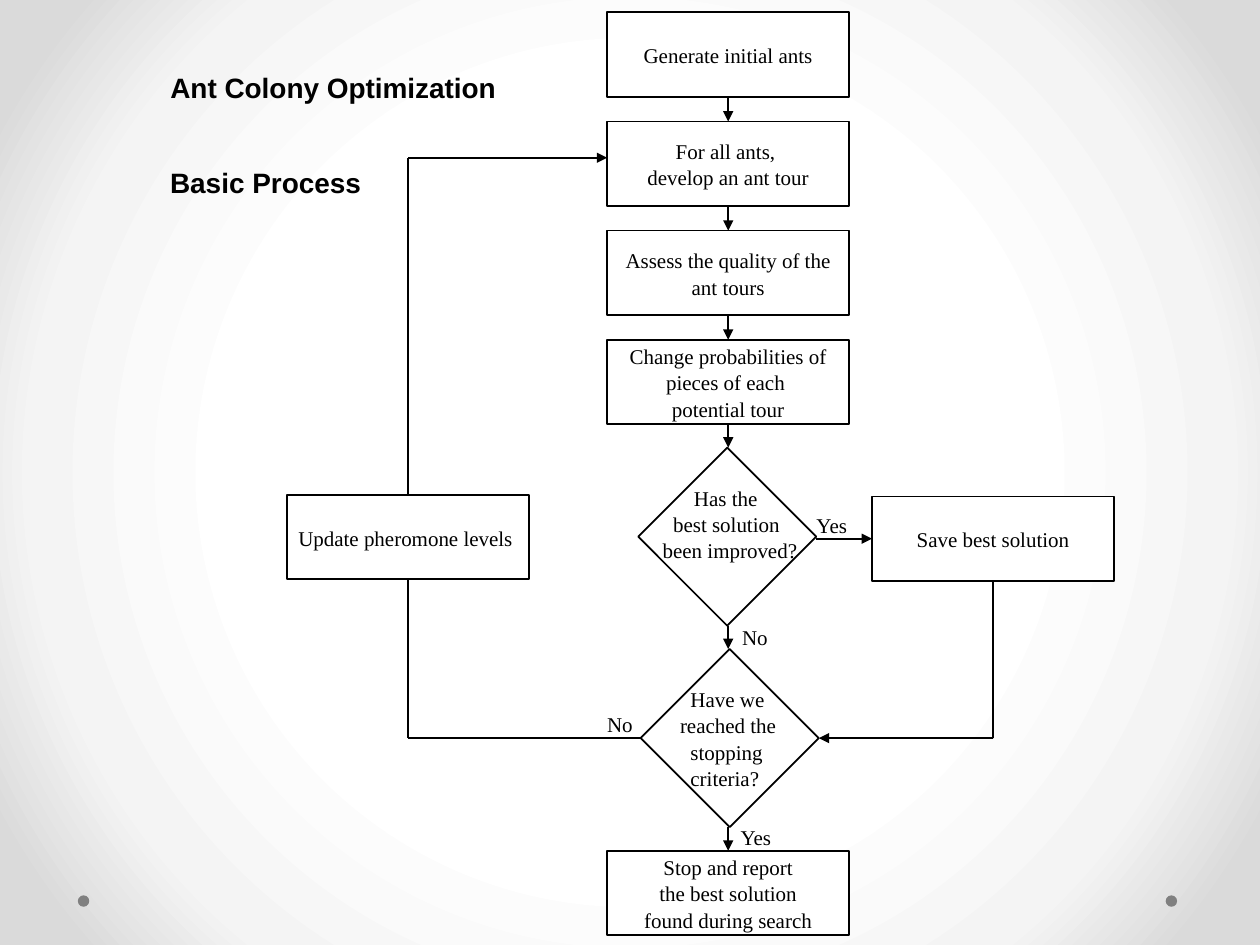
from dataclasses import dataclass
from typing import Optional

from lxml import etree
from pptx import Presentation, oxml, util as u
from pptx.dml import color
from pptx.enum import shapes, text
from pptx.oxml import ns


@dataclass(frozen=True)
class Theme:
    ink: str = "000000"
    paper: str = "FFFFFF"
    dot: str = "808080"
    glow: tuple = ((50, "FFFFFF"), (76, "F4F4F4"), (92, "DADADA"))
    line: float = 1
    head: tuple = ("Arial", 16, True)
    body: tuple = ("Times New Roman", 12, False)


@dataclass(frozen=True)
class Box:
    x: float
    y: float
    lines: tuple


@dataclass(frozen=True)
class Note:
    x: float
    y: float
    w: float
    h: float
    lines: tuple
    dents: tuple = ()


T = Theme()
WIDE, HIGH, SIDE = 4.88, 1.7, 2.54
COL, TOP, STEP = 12.24, 0.25, 2.2
MID = COL + WIDE / 2
HALF = SIDE / 2 ** 0.5  # centre to corner of a tilted square

STEPS = (
    ("Generate initial ants",),
    ("For all ants, ", "develop an ant tour"),
    ("Assess the quality of the", "ant tours"),
    ("Change probabilities of", "pieces of each ", "potential tour"),
)
STOP = Box(COL, 17.15, ("Stop and report", "the best solution", "found during search"))
SAVE = Box(17.58, 10.01, ("Save best solution",))
UPDATE = Box(5.79, 9.98, ("Update pheromone levels ",))
BETTER, DONE = (14.66, 10.82), (14.71, 14.88)  # centres of the decisions
NOTES = (
    Note(13.11, 9.63, 3.23, 1.78,
         ("Has the", "best solution", "been improved?"), (0.63, 0.21, 0)),
    Note(13.46, 13.69, 2.57, 2.29,
         ("Have we", "reached the", "stopping", "criteria?"), (0.21, 0, 0.21, 0.21)),
    Note(11.99, 14.2, 1.02, 0.76, ("No",)),
    Note(14.71, 12.45, 1.02, 0.76, ("No",)),
    Note(16.21, 10.19, 1.17, 0.76, ("Yes",)),
    Note(14.68, 16.48, 1.17, 0.76, ("Yes",)),
)


def rgb(code: str) -> color.RGBColor:
    return color.RGBColor.from_string(code)


def apply(item, **form) -> None:
    for key, val in form.items():
        setattr(item, key, val)


def write(shape, lines: tuple, style: tuple, align, anchor, dents: tuple = ()) -> None:
    frame = shape.text_frame
    frame.text = "\n".join(lines)
    apply(frame, word_wrap=False, auto_size=text.MSO_AUTO_SIZE.NONE, vertical_anchor=anchor)
    face, size, bold = style
    for i, para in enumerate(frame.paragraphs):
        apply(para, alignment=align, line_spacing=1.05)
        if dents:
            para._p.get_or_add_pPr().set("marL", str(u.Cm(dents[i])))
        for run in para.runs:
            apply(run.font, name=face, size=u.Pt(size), bold=bold)
            run.font.color.rgb = rgb(T.ink)


def form(slide, kind, x: float, y: float, w: float, h: float,
         fill: str = T.paper, edge: Optional[str] = T.ink):
    shape = slide.shapes.add_shape(kind, *map(u.Cm, (x, y, w, h)))
    shape.shadow.inherit = False
    shape.fill.solid()
    shape.fill.fore_color.rgb = rgb(fill)
    if edge:
        shape.line.color.rgb = rgb(edge)
        shape.line.width = u.Pt(T.line)
    else:
        shape.line.fill.background()
    return shape


def card(slide, box: Box):
    shape = form(slide, shapes.MSO_SHAPE.RECTANGLE, box.x, box.y, WIDE, HIGH)
    write(shape, box.lines, T.body, text.PP_ALIGN.CENTER, text.MSO_ANCHOR.MIDDLE)
    return shape


def choice(slide, mid: tuple) -> None:
    x, y = (v - SIDE / 2 for v in mid)
    form(slide, shapes.MSO_SHAPE.RECTANGLE, x, y, SIDE, SIDE).rotation = 45


def label(slide, note: Note, style: tuple = T.body) -> None:
    shape = slide.shapes.add_textbox(*map(u.Cm, (note.x, note.y, note.w, note.h)))
    write(shape, note.lines, style, text.PP_ALIGN.LEFT, text.MSO_ANCHOR.TOP, note.dents)


def link(slide, start: tuple, end: tuple, arrow: bool = True,
         tie: Optional[tuple] = None, to: Optional[tuple] = None) -> None:
    """Draw a line; tie and to are (shape, side) joints at its two ends."""
    wire = slide.shapes.add_connector(
        shapes.MSO_CONNECTOR.STRAIGHT, *map(u.Cm, (*start, *end)))
    if tie:
        wire.begin_connect(*tie)
    if to:
        wire.end_connect(*to)
    wire.line.color.rgb = rgb(T.ink)
    wire.line.width = u.Pt(T.line)
    if arrow:
        etree.SubElement(wire.line._get_or_add_ln(), ns.qn("a:tailEnd"), type="triangle")
    etree.SubElement(wire._element.spPr, ns.qn("a:effectLst"))


def backdrop(slide) -> None:
    stops = "".join(f'<a:gs pos="{pos * 1000}"><a:srgbClr val="{code}"/></a:gs>'
                    for pos, code in T.glow)
    bg = oxml.parse_xml(
        f'<p:bg {ns.nsdecls("p", "a")}><p:bgPr><a:gradFill rotWithShape="1">'
        f'<a:gsLst>{stops}</a:gsLst><a:path path="circle">'
        '<a:fillToRect l="50000" t="50000" r="50000" b="50000"/></a:path>'
        '</a:gradFill><a:effectLst/></p:bgPr></p:bg>')
    slide._element.cSld.insert(0, bg)


def main() -> None:
    deck = Presentation()
    apply(deck, slide_width=u.Cm(25.4), slide_height=u.Cm(19.05))
    slide = deck.slides.add_slide(deck.slide_layouts[5])

    # Backdrop and corner dots
    backdrop(slide)
    for x in (1.57, 23.5):
        form(slide, shapes.MSO_SHAPE.OVAL, x, 18.05, 0.23, 0.23, T.dot, None)

    # Headings
    title = slide.shapes.title
    apply(title, left=u.Cm(3.18), top=u.Cm(1.27), width=u.Cm(7.26), height=u.Cm(0.94))
    write(title, ("Ant Colony Optimization",), T.head,
          text.PP_ALIGN.LEFT, text.MSO_ANCHOR.TOP)
    label(slide, Note(3.18, 3.18, 4.37, 0.94, ("Basic Process",)), T.head)

    # Boxes, decisions and labels
    cards = [card(slide, Box(COL, TOP + i * STEP, lines)) for i, lines in enumerate(STEPS)]
    stop, save, update = (card(slide, box) for box in (STOP, SAVE, UPDATE))
    for mid in (BETTER, DONE):
        choice(slide, mid)
    for note in NOTES:
        label(slide, note)

    # Main flow downwards
    for i, (a, b) in enumerate(zip(cards, cards[1:])):
        y = TOP + i * STEP + HIGH
        link(slide, (MID, y), (MID, y + STEP - HIGH), tie=(a, 2), to=(b, 0))
    low = TOP + 3 * STEP + HIGH
    link(slide, (MID, low), (MID, BETTER[1] - HALF), tie=(cards[-1], 2))
    link(slide, (MID, BETTER[1] + HALF), (MID, DONE[1] - HALF))
    link(slide, (MID, DONE[1] + HALF), (MID, STOP.y), to=(stop, 0))

    # Detour through saving
    y, turn = SAVE.y + HIGH / 2, SAVE.x + WIDE / 2
    link(slide, (BETTER[0] + HALF, y), (SAVE.x, y), to=(save, 1))
    link(slide, (turn, SAVE.y + HIGH), (turn, DONE[1]), False, tie=(save, 2))
    link(slide, (turn, DONE[1]), (DONE[0] + HALF, DONE[1]))

    # Loop back through the update
    turn, back = UPDATE.x + WIDE / 2, 3.18
    link(slide, (DONE[0] - HALF, DONE[1]), (turn, DONE[1]), False)
    link(slide, (turn, DONE[1]), (turn, UPDATE.y + HIGH), False, to=(update, 2))
    link(slide, (turn, UPDATE.y), (turn, back), False, tie=(update, 0))
    link(slide, (turn, back), (COL, back))

    deck.save("out.pptx")


if __name__ == "__main__":
    main()
